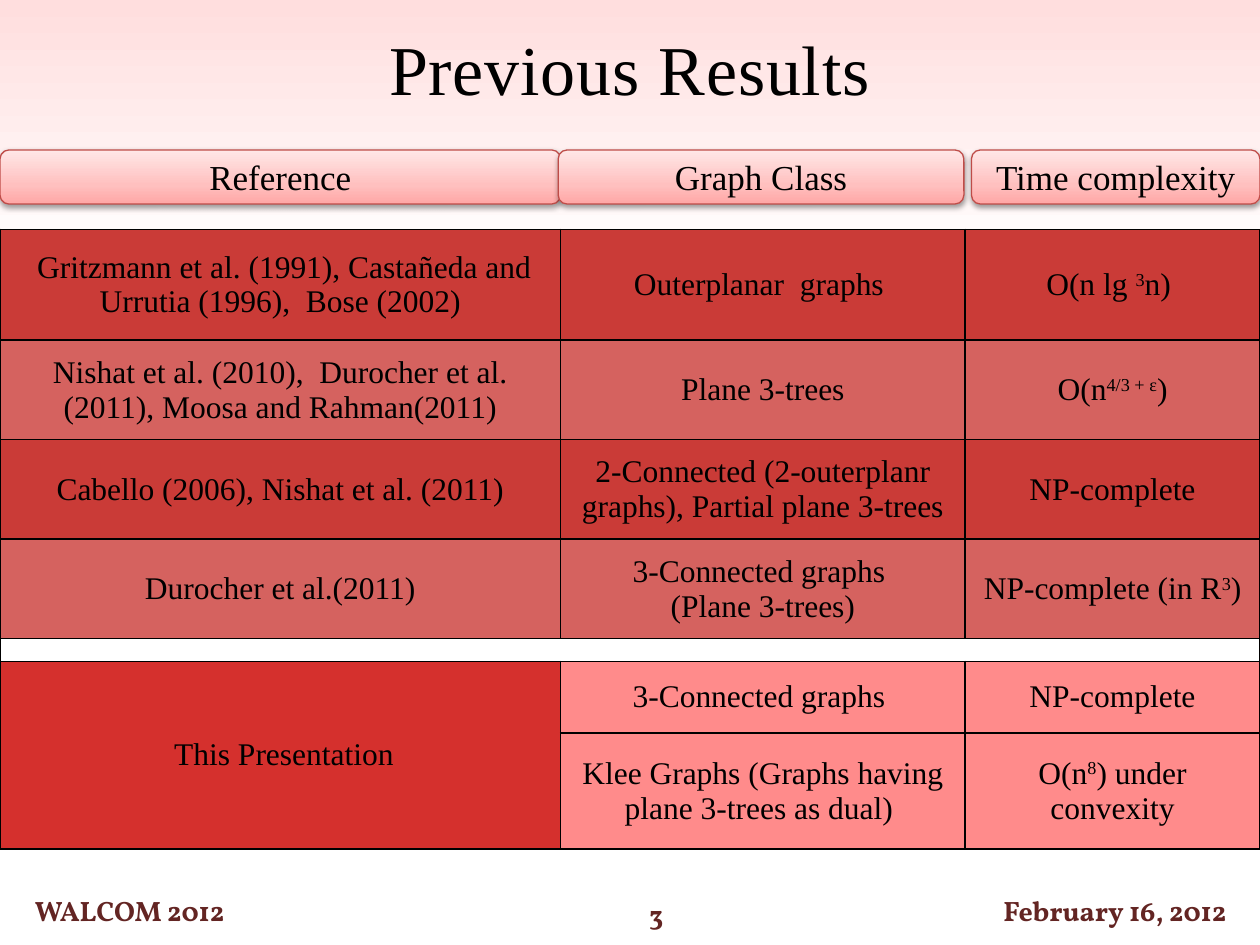
from pptx import Presentation
from pptx.dml.color import RGBColor
from pptx.enum.shapes import MSO_SHAPE as Geo
from pptx.enum.text import MSO_ANCHOR as Anchor, PP_ALIGN as Align
from pptx.oxml import parse_xml
from pptx.oxml.ns import nsdecls, qn
from pptx.util import Inches, Pt

COLORS = {
    "ink": "000000", "foot": "632523", "edge": "BF4C48",
    "dark": "CA3B37", "mid": "D5625F", "main": "D5302D",
    "pale": "FF8B8B", "white": "FFFFFF",
}
SKY = [(0, "FFDEDE"), (30, "FFFFFF"), (100, "FFFFFF")]
PINK = [(0, "FFE7E7"), (65, "FFC0BF"), (100, "FFA6A5")]
SERIF, BRAND = "Times New Roman", "Vollkorn"

COLS = [4.45, 3.21, 2.34]
ROWS = [0.88, 0.79, 0.79, 0.79, 0.18, 0.57, 0.92]
TOP = 1.82

# Text between carets is superscript
CELLS = [
    [" Gritzmann et al. (1991), Castañeda and Urrutia (1996),  Bose (2002)",
     "Outerplanar  graphs ", "O(n lg ^3^n) "],
    ["Nishat et al. (2010),  Durocher et al. (2011), Moosa and Rahman(2011)",
     "Plane 3-trees", "O(n^4/3 + ɛ^)"],
    ["Cabello (2006), Nishat et al. (2011)",
     "2-Connected (2-outerplanr graphs), Partial plane 3-trees",
     "NP-complete"],
    ["Durocher et al.(2011)", "3-Connected graphs \n(Plane 3-trees)",
     "NP-complete (in R^3^)"],
    ["", "", ""],
    [" This Presentation", "3-Connected graphs ", "NP-complete"],
    ["", "Klee Graphs (Graphs having plane 3-trees as dual) ",
     "O(n^8^) under convexity"],
]
FILLS = [["dark"] * 3, ["mid"] * 3, ["dark"] * 3, ["mid"] * 3,
         ["white"] * 3] + [["main", "pale", "pale"]] * 2


def rgb(name):
    return RGBColor.from_string(COLORS[name])


def write(frame, text, size=18, face=SERIF, color="ink", bold=False,
          space=0):
    """Fill a text frame with centred lines."""
    frame.word_wrap = True
    frame.vertical_anchor = Anchor.MIDDLE
    for num, line in enumerate(text.split("\n")):
        para = frame.add_paragraph() if num else frame.paragraphs[0]
        para.alignment = Align.CENTER
        for pos, part in enumerate(line.split("^")):
            run = para.add_run()
            run.text = part
            font = run.font
            font.size, font.name, font.bold = Pt(size), face, bold
            font.color.rgb = rgb(color)
            props = run._r.get_or_add_rPr()
            if pos % 2:
                props.set("baseline", "30000")
            if space:
                props.set("spc", str(int(space * 100)))


def blend(shape, stops):
    """Give a shape a gradient that runs from top to bottom."""
    shape.fill.background()
    marks = "".join(
        f'<a:gs pos="{pos * 1000}"><a:srgbClr val="{tone}"/></a:gs>'
        for pos, tone in stops)
    grad = parse_xml(
        f'<a:gradFill {nsdecls("a")} rotWithShape="1">'
        f'<a:gsLst>{marks}</a:gsLst><a:lin ang="5400000" scaled="0"/>'
        '</a:gradFill>')
    props = shape._element.spPr
    props.replace(props.find(qn("a:noFill")), grad)


def box(slide, left, top, wide, high, geo=Geo.ROUNDED_RECTANGLE):
    """Add a plain shape without fill, line or shadow."""
    shape = slide.shapes.add_shape(
        geo, *(Inches(size) for size in (left, top, wide, high)))
    shape.shadow.inherit = False
    shape.fill.background()
    shape.line.fill.background()
    return shape


def head(slide, text, left, wide):
    """Add a column heading with a soft shadow."""
    shape = box(slide, left, 1.19, wide, 0.43)
    blend(shape, PINK)
    shape.line.color.rgb = rgb("edge")
    shape.line.width = Pt(0.75)
    shape._element.spPr.find(qn("a:effectLst")).append(parse_xml(
        f'<a:outerShdw {nsdecls("a")} blurRad="40000" dist="20000" '
        'dir="5400000" rotWithShape="0"><a:srgbClr val="000000">'
        '<a:alpha val="38000"/></a:srgbClr></a:outerShdw>'))
    write(shape.text_frame, text, size=20)


def border(cell):
    props = cell._tc.get_or_add_tcPr()
    for side in "LRTB":
        props.append(parse_xml(
            f'<a:ln{side} {nsdecls("a")} w="12700"><a:solidFill>'
            f'<a:srgbClr val="{COLORS["ink"]}"/></a:solidFill>'
            f'</a:ln{side}>'))


def grid(slide):
    """Add the table of results."""
    table = slide.shapes.add_table(
        len(ROWS), len(COLS), 0, Inches(TOP),
        Inches(sum(COLS)), Inches(sum(ROWS))).table
    table.first_row = table.horz_banding = False
    for col, wide in zip(table.columns, COLS):
        col.width = Inches(wide)
    for row, high in zip(table.rows, ROWS):
        row.height = Inches(high)
    for r, line in enumerate(CELLS):
        for c, text in enumerate(line):
            cell = table.cell(r, c)
            border(cell)
            cell.fill.solid()
            cell.fill.fore_color.rgb = rgb(FILLS[r][c])
            cell.vertical_anchor = Anchor.MIDDLE
            if text:
                write(cell.text_frame, text)
            else:
                # Small type keeps the divider row thin
                cell.margin_top = cell.margin_bottom = 0
                cell.text_frame.paragraphs[0]._p.append(parse_xml(
                    f'<a:endParaRPr {nsdecls("a")} sz="400"/>'))
    table.cell(4, 0).merge(table.cell(4, 2))
    table.cell(5, 0).merge(table.cell(6, 0))


def main():
    deck = Presentation()
    deck.slide_width, deck.slide_height = Inches(10), Inches(7.5)
    slide = deck.slides.add_slide(deck.slide_layouts[5])

    # Backdrop, behind the title
    sky = box(slide, 0, 0, 10, 7.01, Geo.RECTANGLE)
    blend(sky, SKY)
    slide.shapes._spTree.insert(2, sky._element)

    # Title
    title = slide.shapes.title
    title.left, title.top = 0, Inches(0.15)
    title.width, title.height = Inches(10), Inches(0.77)
    write(title.text_frame, "Previous Results", size=40, space=0.5)

    # Table and its headings
    grid(slide)
    for text, left, wide in [("Reference", 0, 4.45),
                             ("Graph Class", 4.43, 3.22),
                             ("Time complexity", 7.71, 2.29)]:
        head(slide, text, left, wide)

    # Footer
    for text, left, top, wide in [("3", 4.18, 7.08, 2.06),
                                  ("WALCOM 2012", 0, 7.05, 2.06),
                                  ("February 16, 2012", 7.7, 7.05, 2.3)]:
        foot = box(slide, left, top, wide, 0.35)
        write(foot.text_frame, text, size=16, face=BRAND, color="foot",
              bold=True)

    deck.save("out.pptx")


if __name__ == "__main__":
    main()
